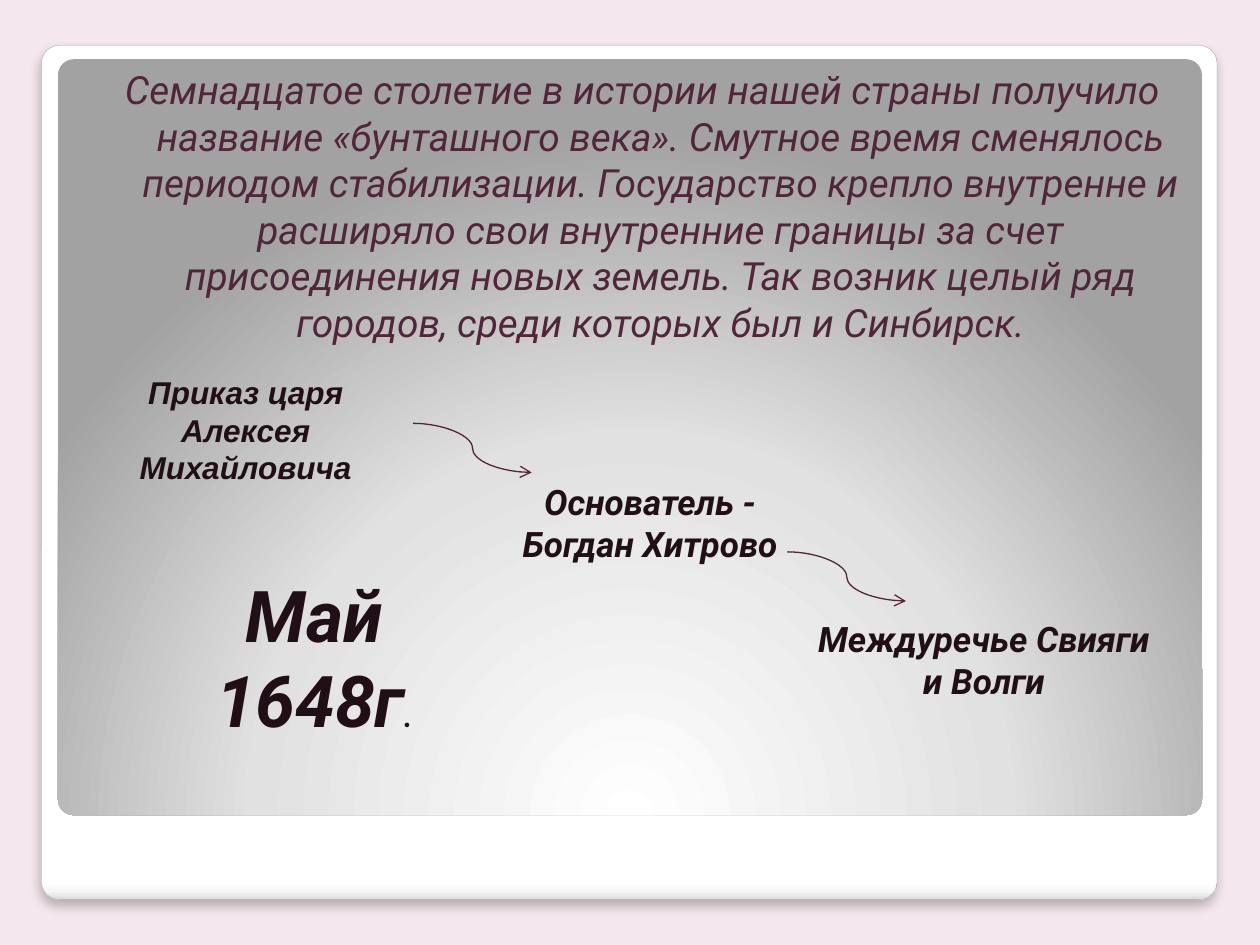
from dataclasses import dataclass

from lxml import etree
from pptx import Presentation
from pptx.dml.color import RGBColor
from pptx.enum.shapes import MSO_CONNECTOR, MSO_SHAPE
from pptx.enum.text import MSO_ANCHOR, MSO_AUTO_SIZE, PP_ALIGN
from pptx.oxml import parse_xml
from pptx.oxml.ns import nsdecls, qn
from pptx.util import Inches, Pt

DARK, PLUM = "210F17", "51253A"
Box = tuple[float, float, float, float]


@dataclass
class Panel:
    box: Box
    stops: list[tuple[int, str]]
    direction: str


@dataclass
class Run:
    text: str
    size: float
    font: str = "Roboto"
    color: str = DARK
    bold: bool = True


@dataclass
class Label:
    box: Box
    runs: list[Run]


PANELS = [
    Panel((0.33, 0.36, 9.33, 6.78),
          [(0, "FFFFFF"), (98, "FFFFFF"), (99, "F7F7F7"), (100, "DADADA")],
          '<a:lin ang="5400000" scaled="0"/>'),
    Panel((0.46, 0.47, 9.08, 6),
          [(0, "FFFFFF"), (55, "E1E1E1"), (100, "A2A2A2")],
          '<a:path path="circle"><a:fillToRect l="50000" t="175000" '
          'r="50000" b="-75000"/></a:path>'),
]
ORDER = Label((0.62, 3.05, 2.66, 0.86),
              [Run("Приказ царя Алексея Михайловича", 18, "Arial")])
INTRO = Label((0.55, 0.47, 9, 2.58), [Run(
    "Семнадцатое столетие в истории нашей страны получило название "
    "«бунташного века». Смутное время сменялось периодом стабилизации. "
    "Государство крепло внутренне и расширяло свои внутренние границы за "
    "счет присоединения новых земель. Так возник целый ряд городов, среди "
    "которых был и Синбирск.", 22.2, color=PLUM, bold=False)])
FACTS = [
    Label((3.91, 3.67, 2.5, 0.86), [Run("Основатель - Богдан Хитрово", 20)]),
    Label((6.33, 4.77, 2.96, 0.85), [Run("Междуречье Свияги и Волги", 20)]),
    Label((1.09, 4.69, 2.81, 1.25), [Run("Май 1648г", 40.8), Run(".", 17)]),
]
ARROW_STARTS = [(3.28, 3.36), (6.25, 4.38)]
ARROW_W, ARROW_H = 0.94, 0.39


def rgb(value: str) -> RGBColor:
    return RGBColor.from_string(value)


def add_panel(slide, panel: Panel):
    sp = slide.shapes.add_shape(MSO_SHAPE.ROUNDED_RECTANGLE,
                                *map(Inches, panel.box))
    sp.adjustments[0] = 0.021
    sp.shadow.inherit = False
    sp.line.fill.background()
    stops = "".join(f'<a:gs pos="{pos * 1000}"><a:srgbClr val="{color}"/></a:gs>'
                    for pos, color in panel.stops)
    geometry = sp._element.spPr.find(qn("a:prstGeom"))
    geometry.addnext(parse_xml(
        f'<a:gradFill {nsdecls("a")} rotWithShape="1"><a:gsLst>{stops}</a:gsLst>'
        f'{panel.direction}</a:gradFill>'))
    return sp


def add_card_edge(sp) -> None:
    """Give the outer card its hairline and soft shadow."""
    sp.line.color.rgb = rgb("A4A4A4")
    sp.line.width = Pt(0.16)
    effects = sp._element.spPr.find(qn("a:effectLst"))
    effects.append(parse_xml(
        f'<a:outerShdw {nsdecls("a")} blurRad="{Pt(6)}" dist="{Pt(4)}" '
        'dir="5400000" algn="t" rotWithShape="0"><a:srgbClr val="000000">'
        '<a:alpha val="25000"/></a:srgbClr></a:outerShdw>'))


def write_label(sp, label: Label, anchor=MSO_ANCHOR.BOTTOM):
    """Place a text shape, fill it and return its paragraph."""
    sp.left, sp.top, sp.width, sp.height = map(Inches, label.box)
    tf = sp.text_frame
    frame = {"word_wrap": True, "auto_size": MSO_AUTO_SIZE.NONE,
             "vertical_anchor": anchor}
    for name, value in frame.items():
        setattr(tf, name, value)
    p = tf.paragraphs[0]
    p.alignment = PP_ALIGN.CENTER
    for run in label.runs:
        r = p.add_run()
        r.text = run.text
        style = {"name": run.font, "size": Pt(run.size),
                 "bold": run.bold, "italic": True}
        for name, value in style.items():
            setattr(r.font, name, value)
        r.font.color.rgb = rgb(run.color)
    return p


def write_intro(sp) -> None:
    p = write_label(sp, INTRO, MSO_ANCHOR.TOP)
    sp.text_frame.margin_left = Inches(0.2)
    p.space_before = Pt(2.5)
    pPr = p._p.get_or_add_pPr()
    pPr.set("marL", str(Inches(0.29)))
    pPr.set("indent", str(Inches(-0.29)))
    etree.SubElement(pPr, qn("a:buNone"))


def add_arrow(slide, x: float, y: float) -> None:
    ends = (x, y, x + ARROW_W, y + ARROW_H)
    line = slide.shapes.add_connector(MSO_CONNECTOR.CURVE, *map(Inches, ends))
    line.line.color.rgb = rgb(PLUM)
    line.line.width = Pt(0.75)
    etree.SubElement(line.line._get_or_add_ln(), qn("a:tailEnd"), type="arrow")
    etree.SubElement(line._element.spPr, qn("a:effectLst"))


def main() -> None:
    prs = Presentation()
    prs.slide_width, prs.slide_height = Inches(10), Inches(7.5)
    slide = prs.slides.add_slide(prs.slide_layouts[1])
    slide.background.fill.solid()
    slide.background.fill.fore_color.rgb = rgb("F4E7ED")

    title, body = slide.placeholders
    card, _ = [add_panel(slide, panel) for panel in PANELS]
    add_card_edge(card)
    for sp in (title, body):  # bring the text in front of the panels
        slide.shapes._spTree.append(sp._element)
    write_label(title, ORDER)
    write_intro(body)

    for label in FACTS:
        write_label(slide.shapes.add_textbox(*map(Inches, label.box)), label)
    for x, y in ARROW_STARTS:
        add_arrow(slide, x, y)
    prs.save("out.pptx")


if __name__ == "__main__":
    main()
